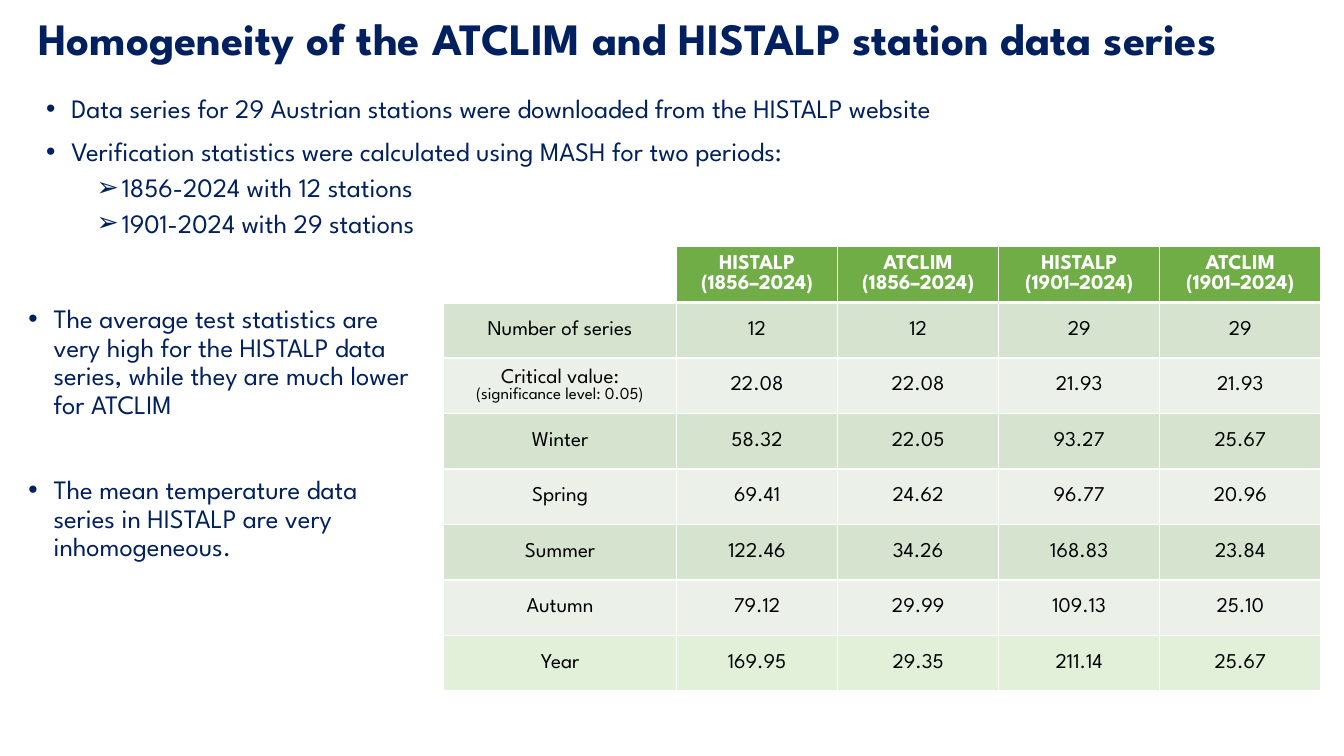
from lxml.etree import SubElement as Sub
from pptx import Presentation
from pptx.dml.color import RGBColor as RGB
from pptx.enum.text import MSO_ANCHOR as Anchor, MSO_AUTO_SIZE as Auto, PP_ALIGN as Align
from pptx.oxml.ns import qn
from pptx.util import Cm, Pt

NAVY = RGB(0x00, 0x20, 0x60)
WHITE = RGB(0xFF, 0xFF, 0xFF)
BLACK = RGB(0x00, 0x00, 0x00)
GREEN = RGB(0x70, 0xAD, 0x47)
SAGE = RGB(0xD5, 0xE3, 0xCF)
MIST = RGB(0xEB, 0xF1, 0xE9)
LIME = RGB(0xE2, 0xF0, 0xD9)

TITLE = "Homogeneity of the ATCLIM and HISTALP station data series"
INTRO = [
    ("Data series for 29 Austrian stations were downloaded from the HISTALP website", 0, 0),
    ("Verification statistics were calculated using MASH for two periods:", 0, 10),
    ("1856-2024 with 12 stations", 1, 5),
    ("1901-2024 with 29 stations", 1, 5),
]
NOTES = [
    ("The average test statistics are very high for the HISTALP data series, "
     "while they are much lower for ATCLIM", 0, 0),
    ("The mean temperature data series in HISTALP are very inhomogeneous.", 0, 40),
]
ROWS = [
    ["", "HISTALP\n(1856–2024)", "ATCLIM\n(1856–2024)",
     "HISTALP\n(1901–2024)", "ATCLIM\n(1901–2024)"],
    ["Number of series", "12", "12", "29", "29"],
    ["Critical value:\v(significance level: 0.05)", "22.08", "22.08", "21.93", "21.93"],
    ["Winter", "58.32", "22.05", "93.27", "25.67"],
    ["Spring", "69.41", "24.62", "96.77", "20.96"],
    ["Summer", "122.46", "34.26", "168.83", "23.84"],
    ["Autumn", "79.12", "29.99", "109.13", "25.10"],
    ["Year", "169.95", "29.35", "211.14", "25.67"],
]
FILLS = [GREEN, SAGE, MIST, SAGE, MIST, SAGE, MIST, LIME]


class Deck:
    """Hold the style and the current slide, and add its elements."""

    font = "League Spartan"
    marks = "•➢"

    def __init__(self):
        self.prs = Presentation()
        self.prs.slide_width, self.prs.slide_height = Cm(33.87), Cm(19.05)
        self.slide = self.prs.slides.add_slide(self.prs.slide_layouts[3])

    def style(self, para, size, color, bold=False):
        for run in para.runs:
            run.font.name = self.font
            run.font.size = Pt(size)
            run.font.bold = bold
            run.font.color.rgb = color

    def place(self, holder, box):
        holder.left, holder.top, holder.width, holder.height = map(Cm, box)
        frame = holder.text_frame
        frame.word_wrap = True
        frame.auto_size = Auto.NONE
        return frame

    def title(self, text, box):
        frame = self.place(self.slide.shapes.title, box)
        frame.text = text
        frame.vertical_anchor = Anchor.MIDDLE
        para = frame.paragraphs[0]
        para.alignment = Align.LEFT
        para.line_spacing = 0.9
        self.style(para, 32, NAVY, True)

    def bullets(self, index, items, box):
        frame = self.place(self.slide.placeholders[index], box)
        frame.text = "\n".join(text for text, _, _ in items)
        for para, (_, level, gap) in zip(frame.paragraphs, items):
            para.level = level
            para.line_spacing = 0.9
            para.space_before = Pt(gap)
            props = para._p.get_or_add_pPr()
            props.set("marL", str(Cm(0.635 + 1.27 * level)))
            props.set("indent", str(-Cm(0.635)))
            Sub(props, qn("a:buFont"), typeface="Arial")
            Sub(props, qn("a:buChar"), char=self.marks[level])
            self.style(para, 19, NAVY)

    def border(self, cell, row):
        props = cell._tc.get_or_add_tcPr()
        widths = {"L": 1, "R": 1, "T": 3 if row == 1 else 1, "B": 3 if row == 0 else 1}
        for side, width in widths.items():
            line = Sub(props, qn(f"a:ln{side}"), w=str(Pt(width)))
            fill = Sub(line, qn("a:solidFill"))
            Sub(fill, qn("a:srgbClr"), val=str(WHITE))

    def cell(self, cell, text, row, fill):
        self.border(cell, row)
        if text:
            cell.fill.solid()
            cell.fill.fore_color.rgb = fill
        else:
            cell.fill.background()
        cell.text = text
        cell.vertical_anchor = Anchor.MIDDLE
        head = row == 0
        for para in cell.text_frame.paragraphs:
            para.alignment = Align.CENTER
            self.style(para, 15, WHITE if head else BLACK, head)
            for run in para.runs[1:]:
                run.font.size = Pt(12)

    def table(self, rows, fills, spot, widths, heights):
        left, top = map(Cm, spot)
        frame = self.slide.shapes.add_table(
            len(rows), len(widths), left, top, Cm(sum(widths)), Cm(sum(heights)))
        table = frame.table
        table.horz_banding = False
        for col, width in zip(table.columns, widths):
            col.width = Cm(width)
        for row, height in zip(table.rows, heights):
            row.height = Cm(height)
        for r, (texts, fill) in enumerate(zip(rows, fills)):
            for c, text in enumerate(texts):
                self.cell(table.cell(r, c), text, r, fill)


def main():
    deck = Deck()
    deck.title(TITLE, (0.71, 0.18, 33.1, 1.7))
    deck.bullets(1, INTRO, (0.91, 2.29, 30.6, 5.05))
    deck.table(ROWS, FILLS, (11.18, 6.2), [5.87] + [4.06] * 4, [1.42] + [1.4] * 7)
    deck.bullets(2, NOTES, (0.46, 7.57, 10.49, 10.2))
    deck.prs.save("out.pptx")


if __name__ == "__main__":
    main()
